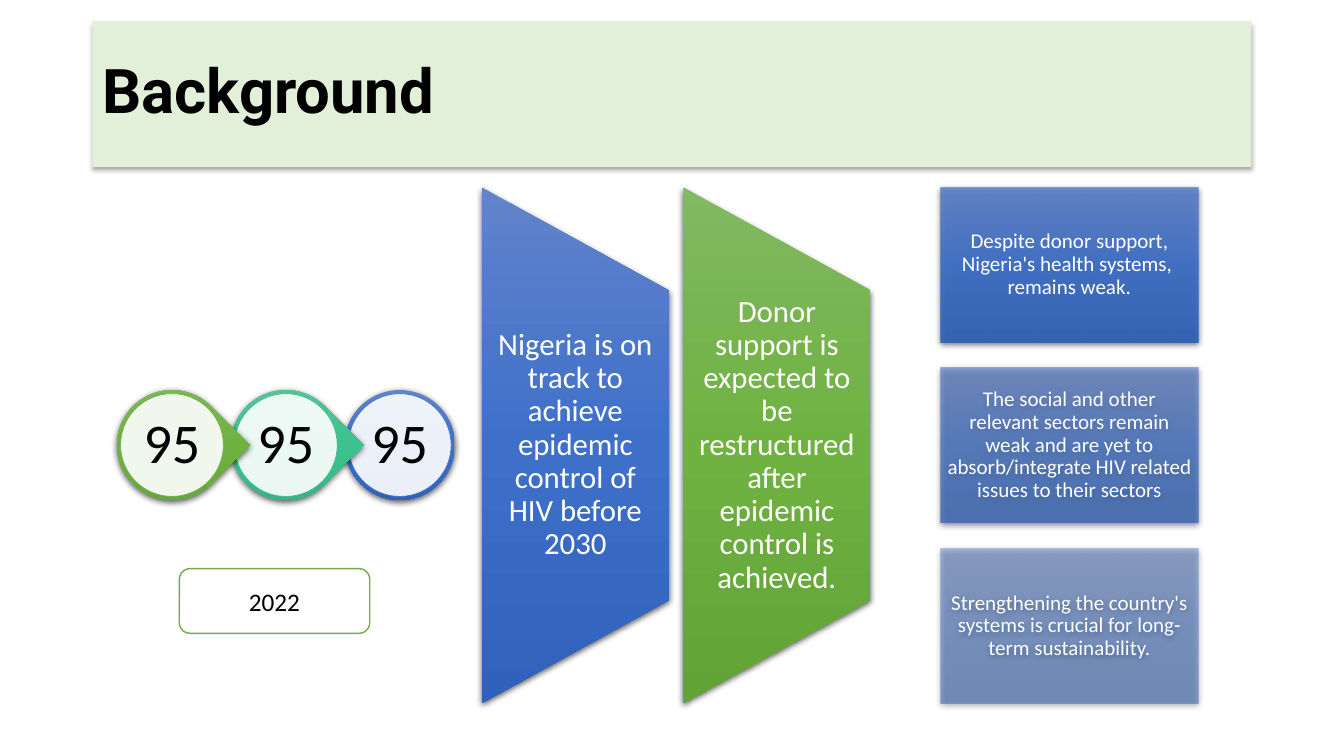
from dataclasses import dataclass

from lxml import etree
from pptx import Presentation
from pptx.dml.color import RGBColor
from pptx.enum.shapes import MSO_SHAPE
from pptx.enum.text import MSO_ANCHOR, PP_ALIGN
from pptx.oxml import parse_xml
from pptx.oxml.ns import nsdecls, qn
from pptx.shapes.autoshape import Shape
from pptx.slide import Slide
from pptx.util import Cm, Pt

RECTANGLE = MSO_SHAPE.RECTANGLE
ROUNDED = MSO_SHAPE.ROUNDED_RECTANGLE
ELLIPSE = MSO_SHAPE.OVAL
TEARDROP = MSO_SHAPE.TEAR
TRAPEZOID = MSO_SHAPE.FLOWCHART_MANUAL_OPERATION
MIDDLE = MSO_ANCHOR.MIDDLE
LEFT, CENTER = PP_ALIGN.LEFT, PP_ALIGN.CENTER

BLUE = ("6183CB", "3E70CA", "3062BB")
TEAL = ("60C39A", "3DC18F", "31B080")
GREEN = ("81B861", "6FB242", "62A336")
WHITE, BLACK = "FFFFFF", "000000"
GREEN_LINE = "70AD47"

ROW_TOP = 4.72
DISC_LEFT, DISC_TOP, DISC_SIZE, DISC_PITCH = 2.95, 9.83, 2.77, 2.87
FACE_SIZE = 2.59
PANEL_LEFT, PANEL_WIDTH, PANEL_HEIGHT, PANEL_PITCH = 12.14, 4.72, 13.0, 5.08
PANEL_TEXT_HEIGHT = 7.8
CARD_LEFT, CARD_WIDTH, CARD_HEIGHT, CARD_PITCH = 23.7, 6.5, 3.91, 4.55


@dataclass(frozen=True)
class Frame:
    left: float
    top: float
    width: float
    height: float

    def centered(self, width: float, height: float) -> "Frame":
        return Frame(
            self.left + (self.width - width) / 2,
            self.top + (self.height - height) / 2,
            width,
            height,
        )

    def lengths(self) -> tuple[Cm, Cm, Cm, Cm]:
        return Cm(self.left), Cm(self.top), Cm(self.width), Cm(self.height)


@dataclass(frozen=True)
class Disc:
    column: int
    kind: MSO_SHAPE
    rotation: int
    gradient: tuple[str, str, str]
    outline: str


@dataclass(frozen=True)
class Panel:
    text: str
    gradient: tuple[str, str, str]


@dataclass(frozen=True)
class Card:
    text: str
    opacity: int


DISCS = (
    Disc(2, ELLIPSE, 0, BLUE, "4472C4"),
    Disc(1, TEARDROP, 45, TEAL, "43BB8D"),
    Disc(0, TEARDROP, 45, GREEN, GREEN_LINE),
)
PANELS = (
    Panel("Nigeria is on track to achieve epidemic control of HIV before 2030", BLUE),
    Panel(
        "Donor support is expected to be restructured after epidemic control is achieved.",
        GREEN,
    ),
)
CARDS = (
    Card("Despite donor support, Nigeria's health systems,  remains weak.", 90),
    Card(
        "The social and other relevant sectors remain weak and are yet to "
        "absorb/integrate HIV related issues to their sectors",
        70,
    ),
    Card(
        "Strengthening the country's systems is crucial for long-term sustainability.",
        50,
    ),
)


def color(value: str) -> RGBColor:
    return RGBColor.from_string(value)


def add_box(page: Slide, kind: MSO_SHAPE, frame: Frame, fill: str = WHITE,
            outline: str | None = None, line_width: float = 1) -> Shape:
    box = page.shapes.add_shape(kind, *frame.lengths())
    box.shadow.inherit = False
    box.fill.solid()
    box.fill.fore_color.rgb = color(fill)
    if outline:
        box.line.color.rgb = color(outline)
        box.line.width = Pt(line_width)
    else:
        box.line.fill.background()
    return box


def set_opacity(box: Shape, percent: int) -> None:
    fill_color = box._element.spPr.find(qn("a:solidFill"))[0]
    etree.SubElement(fill_color, qn("a:alpha"), val=str(percent * 1000))


def set_gradient(box: Shape, colors: tuple[str, str, str], opacity: int = 100) -> None:
    stops = "".join(
        f'<a:gs pos="{index * 50000}"><a:srgbClr val="{value}">'
        f'<a:alpha val="{opacity * 1000}"/></a:srgbClr></a:gs>'
        for index, value in enumerate(colors)
    )
    gradient = parse_xml(
        f'<a:gradFill {nsdecls("a")} rotWithShape="0"><a:gsLst>{stops}</a:gsLst>'
        '<a:lin ang="5400000" scaled="0"/></a:gradFill>'
    )
    properties = box._element.spPr
    properties.replace(properties.find(qn("a:solidFill")), gradient)


def add_shadow(box: Shape, opacity: int = 63, blur: float = 4.5,
               distance: float = 1.5) -> None:
    box._element.spPr.find(qn("a:effectLst")).append(parse_xml(
        f'<a:outerShdw {nsdecls("a")} blurRad="{Pt(blur)}" dist="{Pt(distance)}" '
        f'dir="5400000" algn="ctr" rotWithShape="0"><a:srgbClr val="{BLACK}">'
        f'<a:alpha val="{opacity * 1000}"/></a:srgbClr></a:outerShdw>'
    ))


def write(box: Shape, text: str, size: float, text_color: str,
          margins: tuple[float, float], align: PP_ALIGN = CENTER,
          font: str = "Calibri", bold: bool = False, spacing: float = 0.9) -> None:
    frame = box.text_frame
    frame.text = text
    frame.word_wrap = True
    frame.vertical_anchor = MIDDLE
    frame.margin_left = frame.margin_right = Cm(margins[0])
    frame.margin_top = frame.margin_bottom = Cm(margins[1])
    para = frame.paragraphs[0]
    para.alignment = align
    para.line_spacing = spacing
    span = para.runs[0].font
    span.name, span.size, span.bold = font, Pt(size), bold
    span.color.rgb = color(text_color)


def draw_disc(page: Slide, disc: Disc) -> None:
    frame = Frame(DISC_LEFT + disc.column * DISC_PITCH, DISC_TOP, DISC_SIZE, DISC_SIZE)
    rim = add_box(page, disc.kind, frame)
    rim.rotation = disc.rotation
    set_gradient(rim, disc.gradient)
    add_shadow(rim)
    face = add_box(page, ELLIPSE, frame.centered(FACE_SIZE, FACE_SIZE), WHITE,
                   disc.outline, 0.5)
    set_opacity(face, 90)
    write(face, "95", 40, BLACK, (0.15, 0.15))


def draw_panel(page: Slide, index: int, panel: Panel) -> None:
    frame = Frame(PANEL_LEFT + index * PANEL_PITCH, ROW_TOP, PANEL_WIDTH, PANEL_HEIGHT)
    body = add_box(page, TRAPEZOID, frame.centered(PANEL_HEIGHT, PANEL_WIDTH))
    body.rotation = 270
    set_gradient(body, panel.gradient)
    add_shadow(body)
    label = page.shapes.add_textbox(
        *frame.centered(PANEL_WIDTH, PANEL_TEXT_HEIGHT).lengths())
    write(label, panel.text, 22, WHITE, (0.38, 0))


def draw_card(page: Slide, index: int, card: Card) -> None:
    frame = Frame(CARD_LEFT, ROW_TOP + index * CARD_PITCH, CARD_WIDTH, CARD_HEIGHT)
    box = add_box(page, RECTANGLE, frame)
    set_gradient(box, BLUE, card.opacity)
    add_shadow(box)
    write(box, card.text, 15, WHITE, (0.15, 0.15))


def main() -> None:
    deck = Presentation()
    deck.slide_width, deck.slide_height = Cm(33.87), Cm(19.05)
    page = deck.slides.add_slide(deck.slide_layouts[6])

    title = add_box(page, RECTANGLE, Frame(2.33, 0.53, 29.21, 3.68), "E2F0D9")
    add_shadow(title, 32, 3.5, 2.2)
    write(title, "Background", 44, BLACK, (0.25, 0.13), LEFT, "Roboto", True)

    for disc in DISCS:
        draw_disc(page, disc)
    year = add_box(page, ROUNDED, Frame(4.52, 14.33, 4.8, 1.63), WHITE, GREEN_LINE)
    write(year, "2022", 18, BLACK, (0.25, 0.13), spacing=1.0)
    for index, panel in enumerate(PANELS):
        draw_panel(page, index, panel)
    for index, card in enumerate(CARDS):
        draw_card(page, index, card)

    deck.save("out.pptx")


if __name__ == "__main__":
    main()
